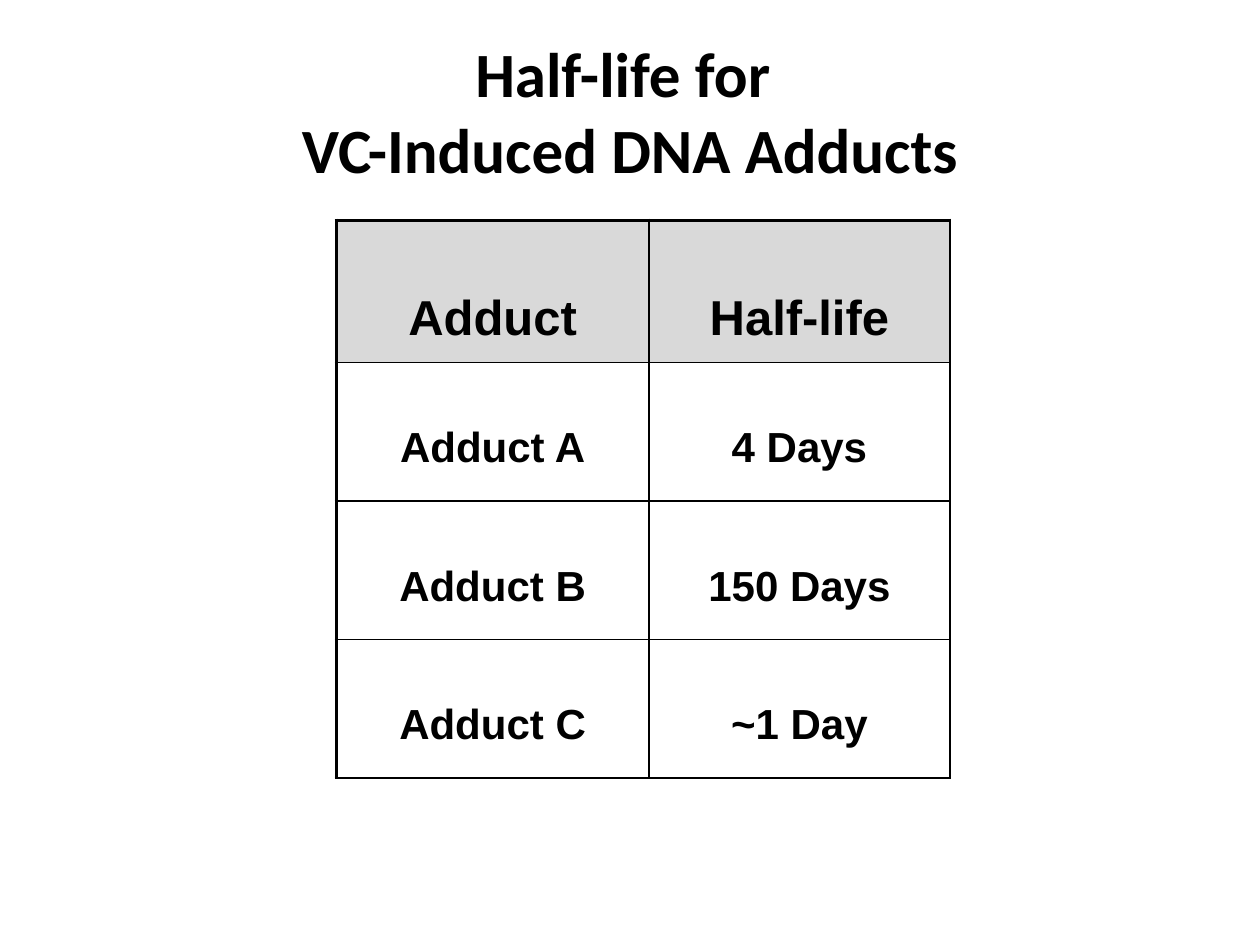
from lxml.etree import SubElement
from pptx import Presentation
from pptx.dml.color import RGBColor
from pptx.enum.text import MSO_ANCHOR as Anchor, PP_ALIGN as Align
from pptx.oxml.ns import qn
from pptx.util import Cm, Pt

COLORS = {"ink": "000000", "header": "D9D9D9"}
HEADING = "Half-life for \vVC-Induced DNA Adducts"
HALF_LIVES = [
    ("Adduct", "Half-life"),
    ("Adduct A", "4 Days"),
    ("Adduct B", "150 Days"),
    ("Adduct C", "~1 Day"),
]
COLUMN_WIDTHS = (6.3, 6.07)
HEADER_HEIGHT, BODY_HEIGHT = 2.87, 2.79
HEADER_STYLE = {"name": "Arial", "size": Pt(28), "bold": True}
BODY_STYLE = {"name": "Arial", "size": Pt(24), "bold": True}
HEADING_STYLE = {"name": "Calibri", "size": Pt(36), "bold": True}


def color(key):
    return RGBColor.from_string(COLORS[key])


def set_all(target, values):
    for attribute, value in values.items():
        setattr(target, attribute, value)


def write(frame, text, style):
    line = frame.paragraphs[0]
    line.text = text
    line.alignment = Align.CENTER
    for run in line.runs:
        set_all(run.font, style)
        run.font.color.rgb = color("ink")


def draw_borders(cell, widths):
    properties = cell._tc.get_or_add_tcPr()
    for position, (side, width) in enumerate(widths.items()):
        border = properties.makeelement(qn(f"a:{side}"), {"w": str(Pt(width))})
        fill = SubElement(border, qn("a:solidFill"))
        SubElement(fill, qn("a:srgbClr"), val=COLORS["ink"])
        properties.insert(position, border)


def add_heading(slide, left, top, width, height):
    heading = slide.shapes.add_textbox(Cm(left), Cm(top), Cm(width), Cm(height))
    set_all(heading.text_frame, {"word_wrap": True, "vertical_anchor": Anchor.MIDDLE})
    write(heading.text_frame, HEADING, HEADING_STYLE)


def add_half_lives(slide, left, top, width, height):
    frame = slide.shapes.add_table(
        len(HALF_LIVES), len(COLUMN_WIDTHS), Cm(left), Cm(top), Cm(width), Cm(height)
    )
    table = frame.table
    set_all(table, {"first_row": False, "horz_banding": False})
    for column, column_width in zip(table.columns, COLUMN_WIDTHS):
        column.width = Cm(column_width)
    for r, entries in enumerate(HALF_LIVES):
        is_header = r == 0
        table.rows[r].height = Cm(HEADER_HEIGHT if is_header else BODY_HEIGHT)
        for c, entry in enumerate(entries):
            cell = table.cell(r, c)
            set_all(cell, {
                "margin_left": Cm(0.25),
                "margin_right": Cm(0.25),
                "margin_top": Cm(1.44 if is_header else 1.25),
                "margin_bottom": Cm(0.13),
                "vertical_anchor": Anchor.TOP,
            })
            if is_header:
                cell.fill.solid()
                cell.fill.fore_color.rgb = color("header")
            else:
                cell.fill.background()
            write(cell.text_frame, entry, HEADER_STYLE if is_header else BODY_STYLE)
            draw_borders(cell, {
                "lnL": 2.25 if c == 0 else 1,
                "lnR": 1,
                "lnT": 2.25 if is_header else 1,
                "lnB": 1,
            })


def main():
    deck = Presentation()
    set_all(deck, {"slide_width": Cm(25.4), "slide_height": Cm(19.05)})
    slide = deck.slides.add_slide(deck.slide_layouts[6])
    add_heading(slide, 1.9, 0.64, 21.6, 3.18)
    add_half_lives(
        slide, 6.78, 4.44, sum(COLUMN_WIDTHS),
        HEADER_HEIGHT + BODY_HEIGHT * (len(HALF_LIVES) - 1),
    )
    deck.save("out.pptx")


if __name__ == "__main__":
    main()
